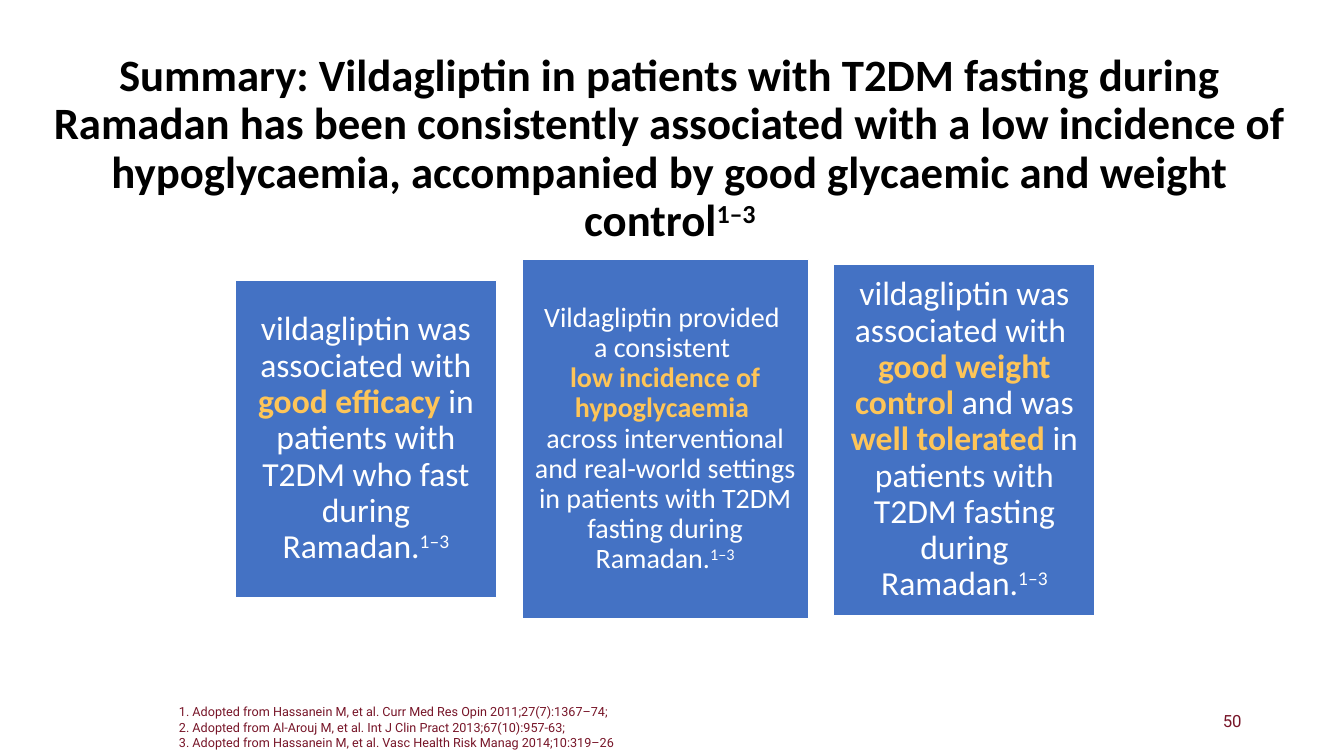
from pptx import Presentation
from pptx.dml.color import RGBColor
from pptx.enum.shapes import MSO_SHAPE
from pptx.enum.text import MSO_ANCHOR, MSO_AUTO_SIZE, PP_ALIGN
from pptx.util import Pt

PX = 9525  # EMU per px, 96 px to the inch
RECTANGLE = MSO_SHAPE.RECTANGLE
MIDDLE, TOP = MSO_ANCHOR.MIDDLE, MSO_ANCHOR.TOP
CENTER, LEFT, RIGHT = PP_ALIGN.CENTER, PP_ALIGN.LEFT, PP_ALIGN.RIGHT
BLACK = RGBColor(0x00, 0x00, 0x00)
WHITE = RGBColor(0xFF, 0xFF, 0xFF)
BLUE = RGBColor(0x44, 0x72, 0xC4)
AMBER = RGBColor(0xFE, 0xC5, 0x58)
MAROON = RGBColor(0x77, 0x15, 0x28)


def place(sp, *box):
    sp.left, sp.top, sp.width, sp.height = (v * PX for v in box)


def write(p, pieces, font, size, color, align):
    """Fill p from (text, style) pieces; style is "", "key" or "sup"."""
    p.alignment = align
    p.font.name, p.font.size, p.font.color.rgb = font, Pt(size), color
    for text, style in pieces:
        for i, line in enumerate(text.split("\n")):
            if i:
                p.add_line_break()
            if not line:
                continue
            r = p.add_run()
            r.text = line
            if style == "key":
                r.font.bold = True
                r.font.color.rgb = AMBER
            elif style == "sup":
                r.font._element.set("baseline", "30000")


prs = Presentation()
prs.slide_width, prs.slide_height = 1280 * PX, 720 * PX
slide = prs.slides.add_slide(prs.slide_layouts[5])

# Title
title = slide.shapes.title
place(title, 28, 44, 1220, 197)
tf = title.text_frame
tf.auto_size = MSO_AUTO_SIZE.NONE
tf.vertical_anchor = MIDDLE
p = tf.paragraphs[0]
p.line_spacing = 0.9
p.font.bold = True
write(p, [("Summary: Vildagliptin in patients with T2DM fasting during Ramadan has been "
           "consistently associated with a low incidence of hypoglycaemia, accompanied "
           "by good glycaemic and weight control", ""), ("1–3", "sup")],
      "Calibri", 32, BLACK, CENTER)

# Finding cards: box, inset, text size, pieces
cards = [
    ((224, 267, 249, 302), 10, 24, [
        ("vildagliptin was associated with ", ""),
        ("good efficacy ", "key"),
        ("in patients with T2DM who fast during Ramadan.", "")]),
    ((497, 247, 273, 342), 8, 20, [
        ("Vildagliptin provided \na consistent \n", ""),
        ("low incidence of hypoglycaemia \n", "key"),
        ("across interventional and real-world settings in patients with T2DM "
         "fasting during Ramadan.", "")]),
    ((794, 252, 249, 334), 10, 24, [
        ("vildagliptin was associated with \n", ""),
        ("good weight control ", "key"),
        ("and was ", ""),
        ("well tolerated ", "key"),
        ("in patients with T2DM fasting during Ramadan.", "")]),
]
for box, inset, size, pieces in cards:
    card = slide.shapes.add_shape(RECTANGLE, *(v * PX for v in box))
    card.shadow.inherit = False
    card.fill.solid()
    card.fill.fore_color.rgb = BLUE
    card.line.color.rgb = WHITE
    card.line.width = Pt(1)
    tf = card.text_frame
    tf.word_wrap = True
    tf.vertical_anchor = MIDDLE
    tf.margin_left = tf.margin_right = tf.margin_top = tf.margin_bottom = inset * PX
    p = tf.paragraphs[0]
    p.line_spacing = 0.9
    write(p, pieces + [("1–3", "sup")], "Calibri", size, WHITE, CENTER)

# References and page number: box, anchor, alignment, text size, text
notes = [
    ((161, 666, 820, 54), TOP, LEFT, 9,
     "1. Adopted from Hassanein M, et al. Curr Med Res Opin 2011;27(7):1367–74; \n"
     "2. Adopted from Al-Arouj M, et al. Int J Clin Pract 2013;67(10):957-63; \n"
     "3. Adopted from Hassanein M, et al. Vasc Health Risk Manag 2014;10:319–26"),
    ((904, 667, 288, 38), MIDDLE, RIGHT, 12, "50"),
]
for box, anchor, align, size, text in notes:
    tf = slide.shapes.add_textbox(*(v * PX for v in box)).text_frame
    tf.word_wrap = True
    tf.vertical_anchor = anchor
    write(tf.paragraphs[0], [(text, "")], "Roboto", size, MAROON, align)

prs.save("out.pptx")
